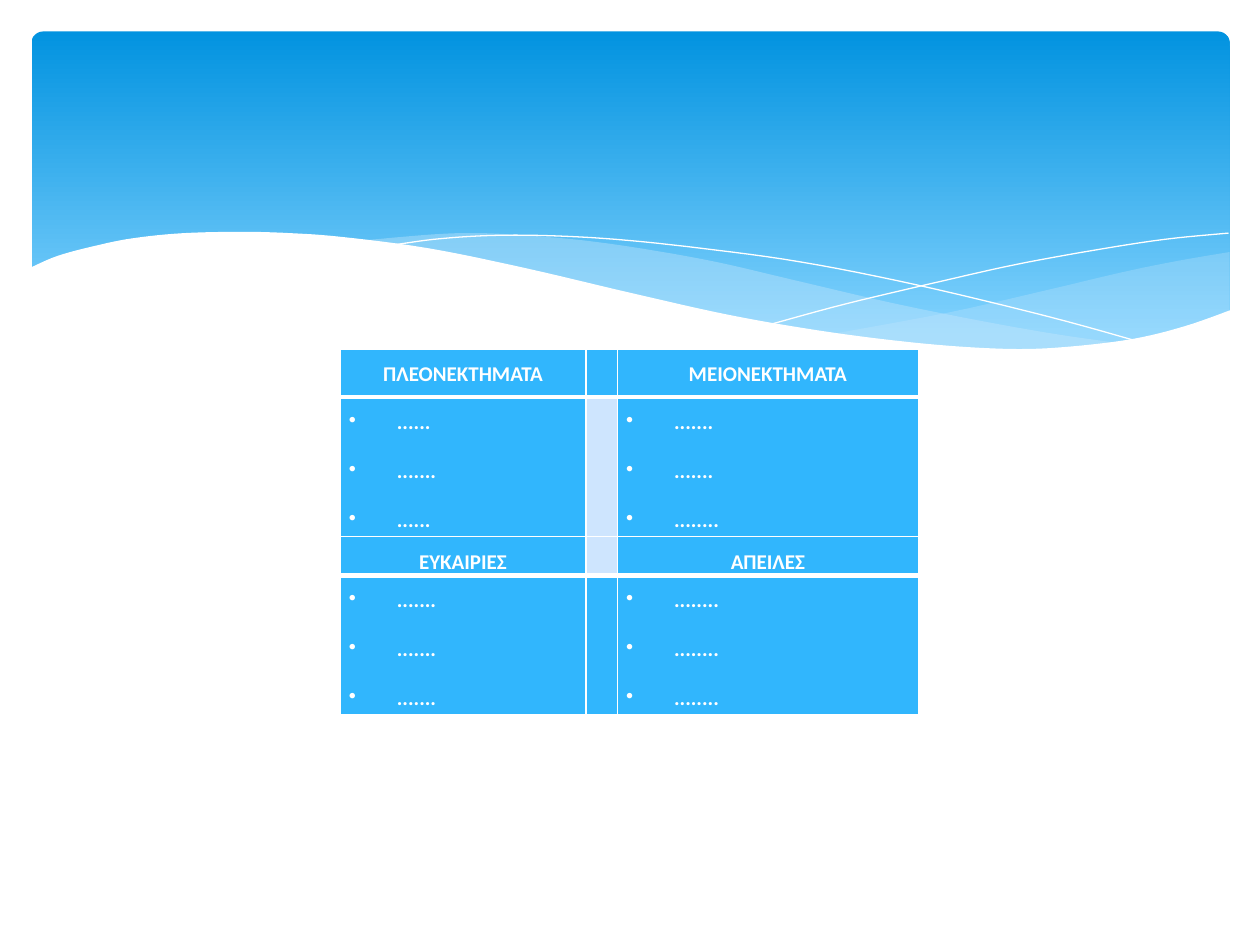
"""Build a slide with a wave banner and a four-part SWOT table."""
from dataclasses import dataclass
from typing import Optional

from lxml.etree import SubElement
from pptx import Presentation
from pptx.dml.color import RGBColor
from pptx.enum.shapes import MSO_SHAPE
from pptx.enum.text import PP_ALIGN
from pptx.oxml.ns import qn
from pptx.util import Inches, Pt

COLORS = {
    "banner_top": "0293E0", "banner_bottom": "83D3FE", "wave": "C6E7FC",
    "white": "FFFFFF", "cell": "31B6FD", "gap": "CEE5FE",
}
FONT = {"name": "Calibri", "size": Pt(12), "bold": True}
HEADING = {"alignment": PP_ALIGN.CENTER, "line_spacing": 1.5, "space_after": Pt(6)}
BULLET = {**HEADING, "alignment": PP_ALIGN.JUSTIFY}
INSETS = {"margin_left": Inches(0.07), "margin_right": Inches(0.07),
          "margin_top": 0, "margin_bottom": 0}

COLS = [1.95, 0.25, 2.39]
ROWS = [0.38, 1.11, 0.3, 1.11]
HEAVY_EDGES = (1, 3)
ROW_TEXTS = [
    (["ΠΛΕΟΝΕΚΤΗΜΑΤΑ"], [], ["ΜΕΙΟΝΕΚΤΗΜΑΤΑ"]),
    (["......", ".......", "......"], [], [".......", ".......", "........"]),
    (["ΕΥΚΑΙΡΙΕΣ"], [], ["ΑΠΕΙΛΕΣ"]),
    ([".......", ".......", "......."], [], ["........", "........", "........"]),
]


@dataclass
class Wave:
    """Curves joined in order, as a filled area or an open line."""
    curves: list
    fill: Optional[str] = None
    alpha: int = 100


WAVES = [
    Wave([[(9.76, 2), (9.35, 2.07), (8.91, 2.16), (8.32, 2.3), (7.53, 2.48), (6.61, 2.65)],
          [(6.61, 2.65), (7.05, 2.71), (7.57, 2.76), (8.03, 2.78), (8.54, 2.76),
           (8.97, 2.7), (9.35, 2.62), (9.76, 2.47)]], "wave", 29),
    Wave([[(8.93, 2.73), (8.37, 2.65), (7.75, 2.54), (7.06, 2.4), (6.29, 2.22),
           (5.69, 2.08), (5.14, 1.98), (4.65, 1.91), (4.2, 1.87), (3.8, 1.85),
           (3.44, 1.86), (2.86, 1.91)],
          [(2.86, 1.91), (3.42, 1.99), (4.04, 2.11), (4.91, 2.32), (5.66, 2.48),
           (6.34, 2.61), (6.95, 2.7), (7.48, 2.76), (7.96, 2.78), (8.38, 2.78),
           (8.93, 2.73)]], "wave", 40),
    Wave([[(3.09, 1.95), (3.44, 1.9), (3.87, 1.87), (4.33, 1.87), (4.89, 1.9),
           (5.56, 1.97), (6.36, 2.08), (7.27, 2.26), (8.31, 2.51), (9.07, 2.72)]]),
    Wave([[(6.13, 2.57), (6.72, 2.41), (7.48, 2.23), (8.06, 2.1), (8.66, 1.99),
           (9.24, 1.9), (9.75, 1.85)]]),
    Wave([[(9.77, 2.46), (9.4, 2.59), (8.99, 2.69), (8.5, 2.75), (8.09, 2.77),
           (7.61, 2.75), (7.08, 2.7), (6.48, 2.62), (5.79, 2.5), (5.03, 2.33),
           (4.18, 2.13), (3.4, 1.97), (2.71, 1.88), (2.3, 1.85), (1.93, 1.84),
           (1.46, 1.85), (1.06, 1.89), (0.76, 1.95), (0.46, 2.03), (0.23, 2.13)],
          [(0.23, 3.29), (9.77, 3.29)]], "white"),
]


def rgb(name: str) -> RGBColor:
    """Return a palette colour."""
    return RGBColor.from_string(COLORS[name])


def apply(target, values: dict) -> None:
    """Set attributes from a dict of format values."""
    for name, value in values.items():
        setattr(target, name, value)


def smooth(points: list, steps: int = 6) -> list:
    """Return a Catmull-Rom curve through the points."""
    padded = [points[0], *points, points[-1]]
    curve = [points[0]]
    for a, b, c, d in zip(padded, padded[1:], padded[2:], padded[3:]):
        for t in (i / steps for i in range(1, steps + 1)):
            curve.append(tuple(
                (2 * q + (r - p) * t + (2 * p - 5 * q + 4 * r - s) * t ** 2
                 + (3 * q - p - 3 * r + s) * t ** 3) / 2
                for p, q, r, s in zip(a, b, c, d)))
    return curve


def add_banner(slide) -> None:
    """Draw the gradient banner."""
    sp = slide.shapes.add_shape(MSO_SHAPE.ROUNDED_RECTANGLE, Inches(0.25), Inches(0.25),
                                Inches(9.51), Inches(2.7))
    sp.adjustments[0] = 0.034
    sp.shadow.inherit = False
    sp.line.fill.background()
    sp.fill.gradient()
    sp.fill.gradient_angle = 270
    stops = [("banner_top", 0), ("banner_bottom", 0.9)]
    for stop, (color, position) in zip(sp.fill.gradient_stops, stops):
        stop.color.rgb = rgb(color)
        stop.position = position


def add_wave(slide, wave: Wave) -> None:
    """Draw one wave area or line."""
    points = [(Inches(x), Inches(y)) for curve in wave.curves for x, y in smooth(curve)]
    builder = slide.shapes.build_freeform(*points[0])
    builder.add_line_segments(points[1:], close=wave.fill is not None)
    sp = builder.convert_to_shape()
    sp.shadow.inherit = False
    if wave.fill is None:
        sp.fill.background()
        sp.line.color.rgb = rgb("white")
        sp.line.width = 0
        return
    sp.line.fill.background()
    sp.fill.solid()
    sp.fill.fore_color.rgb = rgb(wave.fill)
    if wave.alpha < 100:
        color = next(sp._element.spPr.iter(qn("a:srgbClr")))
        SubElement(color, qn("a:alpha"), val=str(wave.alpha * 1000))


def set_borders(cell, row: int) -> None:
    """Give a cell white borders, heavy below the headings."""
    tc_pr = cell._tc.get_or_add_tcPr()
    edges = {"L": None, "R": None, "T": row, "B": row + 1}
    for side, edge in edges.items():
        width = Pt(3 if edge in HEAVY_EDGES else 1)
        ln = SubElement(tc_pr, qn(f"a:ln{side}"), w=str(width))
        fill = SubElement(ln, qn("a:solidFill"))
        SubElement(fill, qn("a:srgbClr"), val=COLORS["white"])


def fill_cell(cell, lines: list, bulleted: bool) -> None:
    """Write a heading or a bulleted list in a cell."""
    tf = cell.text_frame
    for i, line in enumerate(lines):
        p = tf.add_paragraph() if i else tf.paragraphs[0]
        apply(p, BULLET if bulleted else HEADING)
        if bulleted:
            p_pr = p._p.get_or_add_pPr()
            p_pr.set("marL", str(Inches(0.38)))
            p_pr.set("indent", str(-Inches(0.38)))
            SubElement(p_pr, qn("a:buChar"), char="•")
        r = p.add_run()
        r.text = line
        apply(r.font, FONT)
        r.font.color.rgb = rgb("white")


def add_swot(slide) -> None:
    """Draw the table."""
    table = slide.shapes.add_table(len(ROWS), len(COLS), Inches(2.7), Inches(2.77),
                                   Inches(sum(COLS)), Inches(sum(ROWS))).table
    for column, width in zip(table.columns, COLS):
        column.width = Inches(width)
    for i, (row, height) in enumerate(zip(table.rows, ROWS)):
        row.height = Inches(height)
        for cell, lines in zip(row.cells, ROW_TEXTS[i]):
            apply(cell, INSETS)
            set_borders(cell, i)
            cell.fill.solid()
            is_gap = not lines and i in (1, 2)
            cell.fill.fore_color.rgb = rgb("gap" if is_gap else "cell")
            fill_cell(cell, lines, bulleted=i % 2 == 1)


def main() -> None:
    """Build and save the slide."""
    prs = Presentation()
    prs.slide_width, prs.slide_height = Inches(10), Inches(7.5)
    slide = prs.slides.add_slide(prs.slide_layouts[6])
    add_banner(slide)
    for wave in WAVES:
        add_wave(slide, wave)
    add_swot(slide)
    prs.save("out.pptx")


if __name__ == "__main__":
    main()
